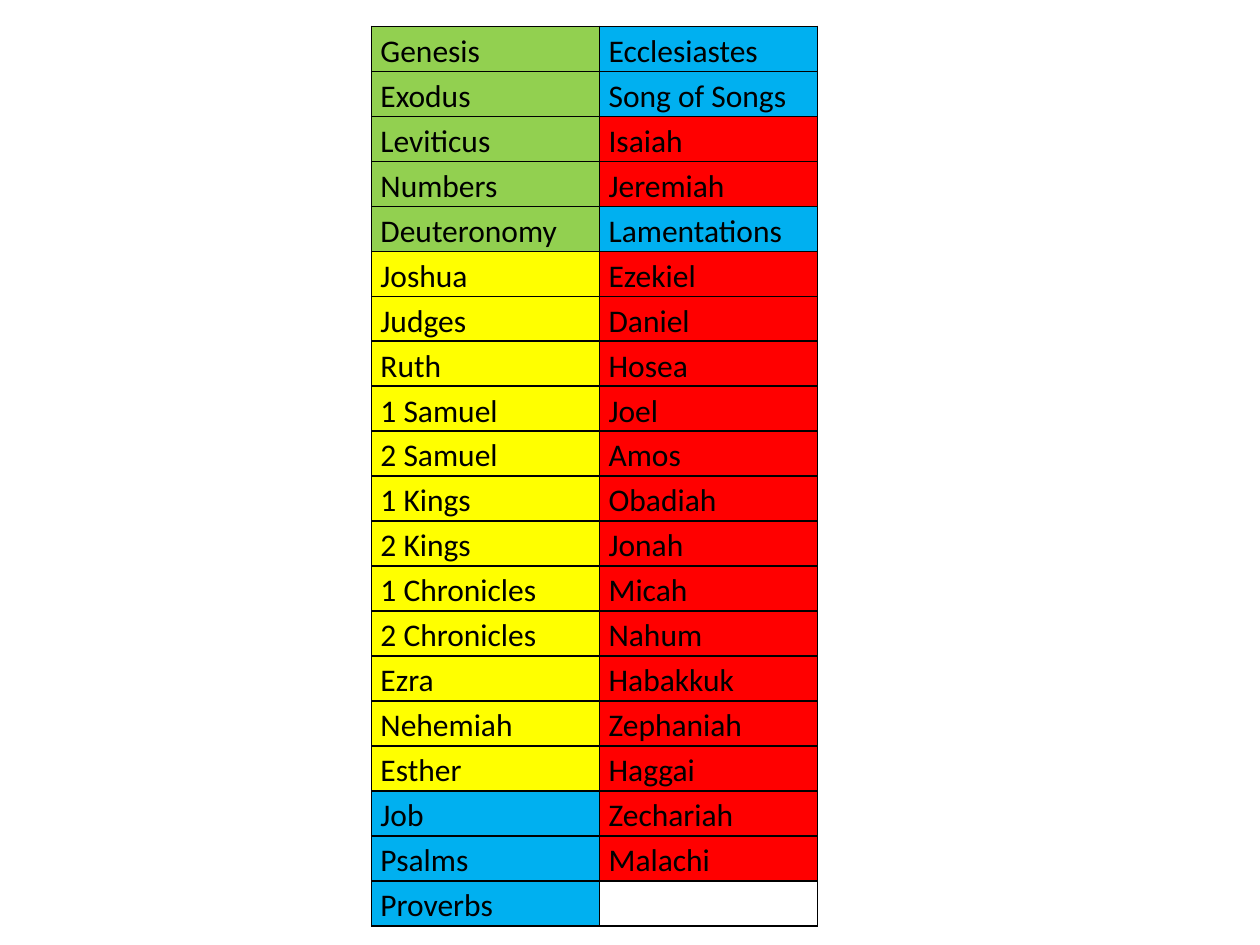
from dataclasses import dataclass

import lxml.etree
import pptx
import pptx.dml.color
import pptx.oxml.ns
import pptx.table
import pptx.util

LAW = "92D050"
HISTORY = "FFFF00"
POETRY = "00B0F0"
PROPHECY = "FF0000"
INK = "000000"
ROWS = 20
ROW_HEIGHT = pptx.util.Cm(0.907)
COLUMN_WIDTHS = (pptx.util.Cm(4.6), pptx.util.Cm(4.39))

CELL_FORMAT = {
    "margin_left": pptx.util.Cm(0.18),
    "margin_right": pptx.util.Cm(0.18),
    "margin_top": 0,
    "margin_bottom": 0,
}
FONT_FORMAT = {"name": "Calibri", "size": pptx.util.Pt(18), "bold": False}
TABLE_FORMAT = {"first_row": False, "horz_banding": False}


@dataclass(frozen=True)
class Section:
    fill: str
    books: tuple[str, ...]


SECTIONS = (
    Section(LAW, ("Genesis", "Exodus", "Leviticus", "Numbers", "Deuteronomy")),
    Section(HISTORY, (
        "Joshua", "Judges", "Ruth", "1 Samuel", "2 Samuel", "1 Kings",
        "2 Kings", "1 Chronicles", "2 Chronicles", "Ezra", "Nehemiah", "Esther",
    )),
    Section(POETRY, ("Job", "Psalms", "Proverbs", "Ecclesiastes", "Song of Songs")),
    Section(PROPHECY, ("Isaiah", "Jeremiah")),
    Section(POETRY, ("Lamentations",)),
    Section(PROPHECY, (
        "Ezekiel", "Daniel", "Hosea", "Joel", "Amos", "Obadiah", "Jonah",
        "Micah", "Nahum", "Habakkuk", "Zephaniah", "Haggai", "Zechariah", "Malachi",
    )),
)


def color(value: str) -> pptx.dml.color.RGBColor:
    return pptx.dml.color.RGBColor.from_string(value)


def apply_format(target: object, values: dict[str, object]) -> None:
    for name, value in values.items():
        setattr(target, name, value)


def draw_borders(cell: pptx.table._Cell) -> None:
    qn = pptx.oxml.ns.qn
    properties = cell._tc.get_or_add_tcPr()
    for side in ("a:lnL", "a:lnR", "a:lnT", "a:lnB"):
        border = lxml.etree.SubElement(properties, qn(side), w=str(pptx.util.Pt(1)))
        paint = lxml.etree.SubElement(border, qn("a:solidFill"))
        lxml.etree.SubElement(paint, qn("a:srgbClr"), val=INK)


def prepare_cell(cell: pptx.table._Cell) -> None:
    apply_format(cell, CELL_FORMAT)
    draw_borders(cell)
    cell.fill.background()


def write_book(cell: pptx.table._Cell, book: str, fill: str) -> None:
    cell.fill.solid()
    cell.fill.fore_color.rgb = color(fill)
    line = cell.text_frame.paragraphs[0]
    line.line_spacing = 1.15
    title = line.add_run()
    title.text = book
    apply_format(title.font, FONT_FORMAT)
    title.font.color.rgb = color(INK)


def main() -> None:
    deck = pptx.Presentation()
    deck.slide_width = pptx.util.Cm(25.4)
    deck.slide_height = pptx.util.Cm(19.05)
    slide = deck.slides.add_slide(deck.slide_layouts[6])

    canon = slide.shapes.add_table(
        ROWS, len(COLUMN_WIDTHS), pptx.util.Cm(7.49), pptx.util.Cm(0.53),
        sum(COLUMN_WIDTHS), ROWS * ROW_HEIGHT,
    ).table
    apply_format(canon, TABLE_FORMAT)
    for column, width in zip(canon.columns, COLUMN_WIDTHS):
        column.width = width
    for row in canon.rows:
        row.height = ROW_HEIGHT
    for cell in canon.iter_cells():
        prepare_cell(cell)

    entries = [(book, section.fill) for section in SECTIONS for book in section.books]
    for index, (book, fill) in enumerate(entries):
        column, row = divmod(index, ROWS)
        write_book(canon.cell(row, column), book, fill)

    deck.save("out.pptx")


if __name__ == "__main__":
    main()
